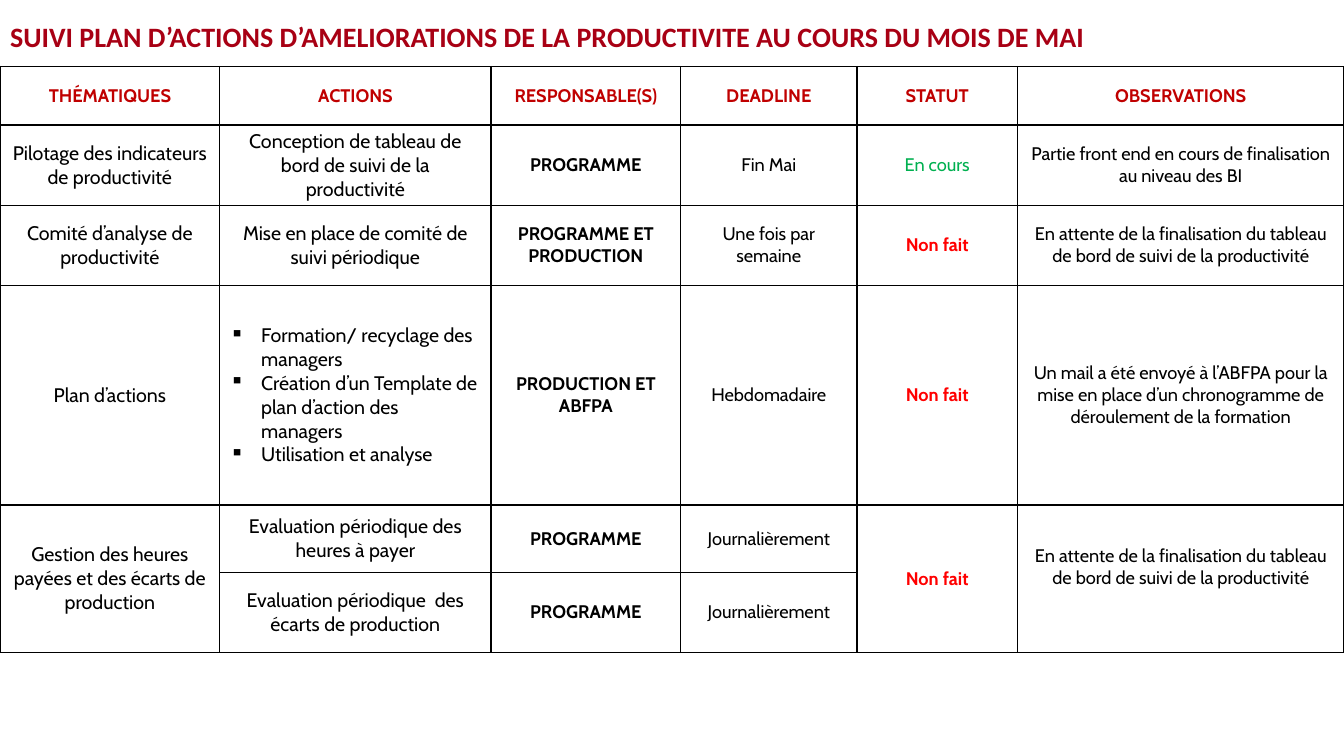
from dataclasses import dataclass

from lxml import etree
from pptx import Presentation
from pptx import util as u
from pptx.dml.color import RGBColor
from pptx.enum import text
from pptx.oxml.ns import qn


@dataclass(frozen=True)
class Theme:
    title_font: str = "Calibri"
    table_font: str = "Cabin"
    title_color: str = "A80014"
    header_color: str = "C00000"
    ink: str = "000000"
    in_progress: str = "00B050"
    not_done: str = "FF0000"
    title_size: int = 20
    topic_size: int = 14
    detail_size: int = 13
    border_width: int = 1


THEME = Theme()
COLUMN_WIDTHS = [2.18, 2.69, 1.88, 1.75, 1.59, 3.24]
ROW_HEIGHTS = [0.58, 0.79, 0.79, 2.18, 0.67, 0.79]
MERGED_COLUMNS = [0, 4, 5]
STATUS_COLORS = {"En cours": THEME.in_progress, "Non fait": THEME.not_done}
WAITING = "En attente de la finalisation du tableau de bord de suivi de la productivité"

HEADERS = ["THÉMATIQUES", "ACTIONS", "RESPONSABLE(S)", "DEADLINE", "STATUT", "OBSERVATIONS"]
PLAN_ROWS = [
    ["Pilotage des indicateurs de productivité",
     "Conception de tableau de bord de suivi de la productivité",
     "PROGRAMME", "Fin Mai", "En cours",
     "Partie front end en cours de finalisation au niveau des BI"],
    ["Comité d’analyse de productivité",
     "Mise en place de comité de suivi périodique",
     "PROGRAMME ET PRODUCTION", "Une fois par semaine", "Non fait", WAITING],
    ["Plan d’actions",
     ["Formation/ recyclage des managers",
      "Création d’un Template de plan d’action des managers",
      "Utilisation et analyse"],
     "PRODUCTION ET ABFPA", "Hebdomadaire", "Non fait",
     "Un mail a été envoyé à l’ABFPA pour la mise en place d’un chronogramme "
     "de déroulement de la formation"],
    ["Gestion des heures payées et des écarts de production",
     "Evaluation périodique des heures à payer",
     "PROGRAMME", "Journalièrement", "Non fait", WAITING],
    [None, "Evaluation périodique  des écarts de production",
     "PROGRAMME", "Journalièrement", None, None],
]


def write(paragraph, content, *, font, size, color, bold=False,
          align=text.PP_ALIGN.LEFT, bullet=None):
    if bullet:
        properties = paragraph._p.get_or_add_pPr()
        properties.set("marL", str(u.Inches(0.31)))
        properties.set("indent", str(u.Inches(-0.31)))
        etree.SubElement(properties, qn("a:buChar")).set("char", bullet)
    paragraph.alignment = align
    run = paragraph.add_run()
    run.text = content
    run.font.name = font
    run.font.size = u.Pt(size)
    run.font.bold = bold
    run.font.color.rgb = RGBColor.from_string(color)


class SlideBuilder:
    def __init__(self, presentation, theme):
        self.theme = theme
        self.slide = presentation.slides.add_slide(presentation.slide_layouts[5])

    def title(self, content, left, top, width, height):
        shape = self.slide.shapes.title
        shape.left, shape.top = u.Inches(left), u.Inches(top)
        shape.width, shape.height = u.Inches(width), u.Inches(height)
        frame = shape.text_frame
        frame.margin_left = frame.margin_right = frame.margin_bottom = 0
        frame.margin_top = u.Inches(0.01)
        frame.vertical_anchor = text.MSO_ANCHOR.MIDDLE
        frame.word_wrap = True
        frame.auto_size = text.MSO_AUTO_SIZE.SHAPE_TO_FIT_TEXT
        paragraph = frame.paragraphs[0]
        paragraph.line_spacing = 0.9
        write(paragraph, content, font=self.theme.title_font,
              size=self.theme.title_size, color=self.theme.title_color, bold=True)

    def table(self, rows, left, top, widths, heights):
        frame = self.slide.shapes.add_table(
            len(rows), len(widths), u.Inches(left), u.Inches(top),
            u.Inches(sum(widths)), u.Inches(sum(heights)))
        table = frame.table
        table.first_row = table.horz_banding = False
        for column, width in zip(table.columns, widths):
            column.width = u.Inches(width)
        for row, height in zip(table.rows, heights):
            row.height = u.Inches(height)
        for row_index, row in enumerate(rows):
            for column_index, content in enumerate(row):
                self.cell(table.cell(row_index, column_index), content,
                          self.cell_format(row_index, column_index, content))
        return table

    def cell_format(self, row_index, column_index, content):
        theme = self.theme
        if row_index == 0:
            return dict(size=theme.detail_size, color=theme.header_color, bold=True)
        if column_index < 2:
            return dict(size=theme.topic_size, color=theme.ink)
        color = theme.ink
        if column_index == 4:
            color = STATUS_COLORS.get(content, theme.ink)
        return dict(size=theme.detail_size, color=color,
                    bold=column_index == 2 or content == "Non fait")

    def cell(self, cell, content, style):
        cell.vertical_anchor = text.MSO_ANCHOR.MIDDLE
        self.borders(cell)
        cell.fill.background()
        if content is None:
            return
        is_list = isinstance(content, list)
        align = text.PP_ALIGN.LEFT if is_list else text.PP_ALIGN.CENTER
        frame = cell.text_frame
        for index, line in enumerate(content if is_list else [content]):
            paragraph = frame.add_paragraph() if index else frame.paragraphs[0]
            write(paragraph, line, font=self.theme.table_font, align=align,
                  bullet="▪" if is_list else None, **style)

    def borders(self, cell):
        properties = cell._tc.get_or_add_tcPr()
        for side in ("a:lnL", "a:lnR", "a:lnT", "a:lnB"):
            line = etree.SubElement(properties, qn(side))
            line.set("w", str(u.Pt(self.theme.border_width)))
            fill = etree.SubElement(line, qn("a:solidFill"))
            etree.SubElement(fill, qn("a:srgbClr")).set("val", self.theme.ink)


def main():
    presentation = Presentation()
    presentation.slide_width = u.Inches(13.33)
    presentation.slide_height = u.Inches(7.5)
    builder = SlideBuilder(presentation, THEME)
    builder.title("SUIVI PLAN D’ACTIONS D’AMELIORATIONS DE LA PRODUCTIVITE "
                  "AU COURS DU MOIS DE MAI", 0.1, 0.22, 12.49, 0.32)
    table = builder.table([HEADERS] + PLAN_ROWS, 0, 0.66, COLUMN_WIDTHS, ROW_HEIGHTS)
    last_row = len(PLAN_ROWS)
    for column_index in MERGED_COLUMNS:
        table.cell(last_row - 1, column_index).merge(table.cell(last_row, column_index))
    table.cell(last_row - 1, 5).margin_bottom = u.Inches(0.27)
    presentation.save("out.pptx")


if __name__ == "__main__":
    main()
